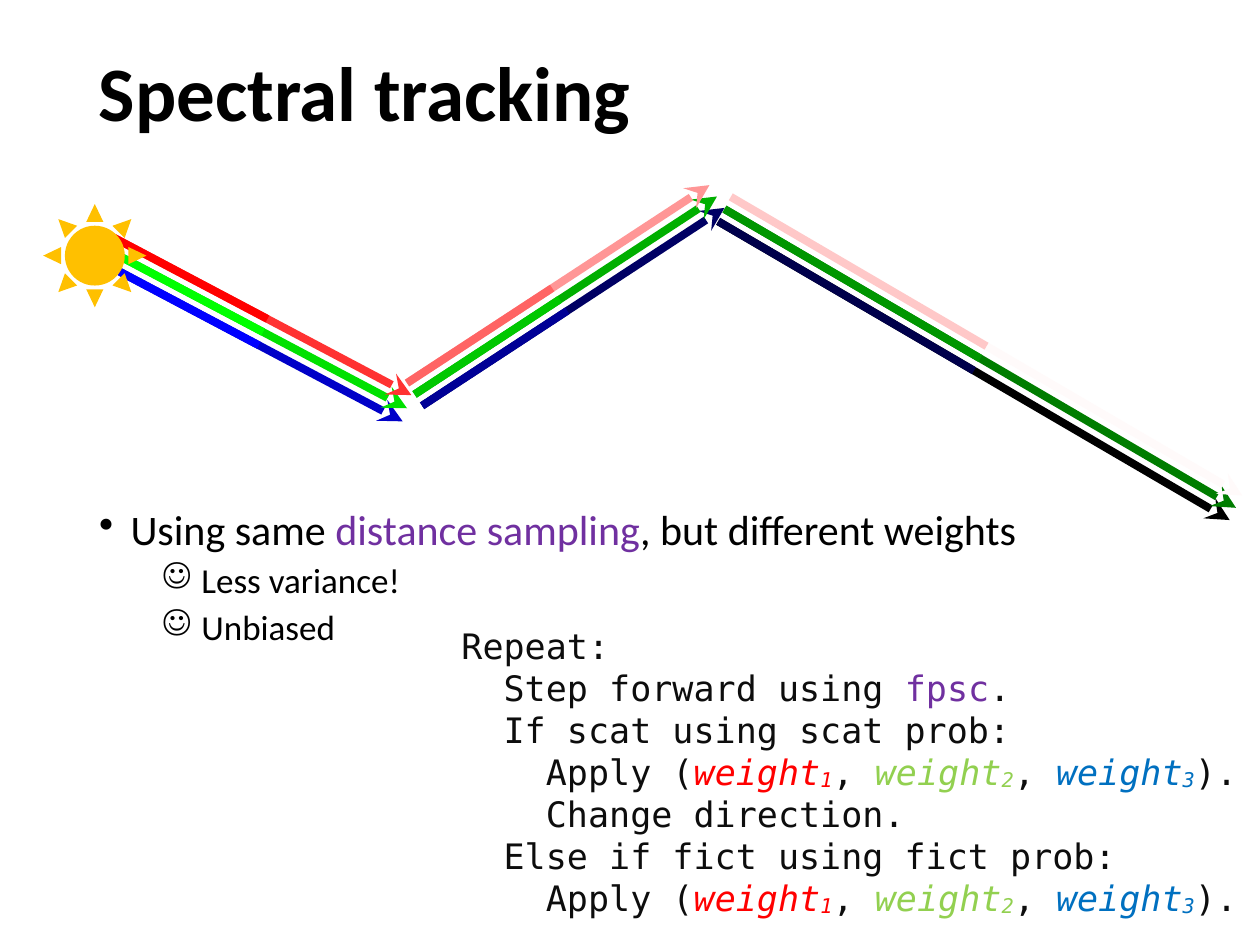
from dataclasses import dataclass

from lxml import etree
from pptx import Presentation
from pptx import util as u
from pptx.dml import color
from pptx.enum import shapes, text
from pptx.oxml import ns


@dataclass(frozen=True)
class Theme:
    """Fonts, type sizes and colours of the slide."""
    sans: str = "Calibri"
    mono: str = "DejaVu Sans Mono"
    title_size: int = 44
    body_size: int = 24
    small_size: int = 20
    black: str = "000000"
    code: str = "0D0D0D"
    purple: str = "7030A0"
    sun: str = "FFC000"
    weights: tuple = ("FF0000", "92D050", "0070C0")


@dataclass(frozen=True)
class Leg:
    """One straight path of three beams, with blue, green and red colours."""
    start: tuple
    end: tuple
    red_shift: tuple
    first_share: float
    first_colors: tuple
    full_colors: tuple


THEME = Theme()
LEGS = (
    Leg((236.9, 225.4), (409.7, 112.3), (-4.3, -6.5), 0.48,
        ("000096", "00C800", "FF6464"), ("000064", "00AF00", "FF9696")),
    Leg((61.2, 142.6), (232.6, 233.3), (2.5, -7.5), 0.52,
        ("0000FF", "00FF00", "FF0000"), ("0000C8", "00E100", "FF3232")),
    Leg((414, 119.5), (706.3, 290.2), (3.6, -7), 0.5,
        ("00004B", "009600", "FFC8C8"), ("000000", "007D00", "FFFAFA")),
)


def rgb(value):
    """Turn a hex string into a colour."""
    return color.RGBColor.from_string(value)


def add_box(page, left, top, width, height, inset=None, wrap=True, anchor=text.MSO_ANCHOR.TOP):
    """Add a text box and return its text frame."""
    frame = page.shapes.add_textbox(u.Pt(left), u.Pt(top), u.Pt(width), u.Pt(height)).text_frame
    frame.word_wrap = wrap
    frame.vertical_anchor = anchor
    if inset is not None:
        frame.margin_left = frame.margin_right = u.Pt(inset)
        frame.margin_top = frame.margin_bottom = u.Pt(inset)
    return frame


def add_para(frame, spans, font, size, fill, bullet=None, margin=0, hang=0,
             before=0, spacing=None, bold=None):
    """Add a paragraph of (text, colour, style) spans."""
    first = frame.paragraphs[0]
    para = frame.add_paragraph() if first.runs else first
    if bullet:
        props = para._p.get_or_add_pPr()
        props.set("marL", str(u.Pt(margin)))
        props.set("indent", str(u.Pt(-hang)))
        etree.SubElement(props, ns.qn("a:buChar")).set("char", bullet)
    if spacing:
        para.line_spacing = spacing
    if before:
        para.space_before = u.Pt(before)
    para.font.name, para.font.size, para.font.bold = font, u.Pt(size), bold
    colors = {shade or fill for _, shade, _ in spans}
    if len(colors) == 1:
        para.font.color.rgb = rgb(colors.pop())
    for words, shade, style in spans:
        span = para.add_run()
        span.text = words
        if len({other for _, other, _ in spans}) > 1:
            span.font.color.rgb = rgb(shade or fill)
        if style:
            span.font.italic = True
        if style == "subscript":
            span._r.get_or_add_rPr().set("baseline", "-6000")


def plain(words, shade=None):
    """Make an upright span."""
    return words, shade, None


def weight_line():
    """Make the spans of the line that applies the three weights."""
    spans = [plain("    Apply (")]
    for number, shade in enumerate(THEME.weights, 1):
        spans += [("weight", shade, "italic"), (str(number), shade, "subscript"),
                  plain(", " if number < len(THEME.weights) else ").")]
    return spans


def add_beam(page, start, end, shade, arrow):
    """Draw one beam, with an arrowhead at its end if asked."""
    points = [u.Pt(value) for value in (*start, *end)]
    beam = page.shapes.add_connector(shapes.MSO_CONNECTOR.STRAIGHT, *points)
    beam.line.width = u.Pt(4.5)
    beam.line.color.rgb = rgb(shade)
    if arrow:
        etree.SubElement(beam.line._get_or_add_ln(), ns.qn("a:tailEnd")).set("type", "stealth")
    etree.SubElement(beam._element.spPr, ns.qn("a:effectLst"))


def add_leg(page, leg, first_part):
    """Draw the three beams of a leg, or only their first parts."""
    share = leg.first_share if first_part else 1
    colors = leg.first_colors if first_part else leg.full_colors
    for side, shade in zip((-1, 0, 1), colors):
        start = [place + side * shift for place, shift in zip(leg.start, leg.red_shift)]
        end = [a + share * (b - c) for a, b, c in zip(start, leg.end, leg.start)]
        add_beam(page, start, end, shade, not first_part)


def add_sun(page):
    """Draw the sun."""
    sun = page.shapes.add_shape(shapes.MSO_SHAPE.SUN, u.Pt(24.7), u.Pt(116.6), u.Pt(59), u.Pt(59))
    sun.adjustments[0] = 0.21
    sun.shadow.inherit = False
    sun.fill.solid()
    sun.fill.fore_color.rgb = rgb(THEME.sun)
    sun.line.fill.background()


def add_title(page):
    """Add the heading."""
    frame = add_box(page, 49.5, 24, 621, 62.5, anchor=text.MSO_ANCHOR.MIDDLE)
    add_para(frame, [plain("Spectral tracking")], THEME.sans, THEME.title_size, THEME.black,
             spacing=0.9, bold=True)


def add_points(page):
    """Add the bulleted statements."""
    frame = add_box(page, 49.5, 287.5, 602, 216)
    lead = [plain("Using same "), plain("distance sampling", THEME.purple),
            plain(", but different weights")]
    add_para(frame, lead, THEME.sans, THEME.body_size, THEME.black,
             bullet="•", margin=18, hang=18, spacing=0.9)
    for words in ("Less variance!", "Unbiased"):
        add_para(frame, [plain(words)], THEME.sans, THEME.small_size, THEME.black,
                 bullet="☺", margin=58.5, hang=22.5, before=5, spacing=0.9)


def add_code(page):
    """Add the pseudocode."""
    frame = add_box(page, 259.2, 352, 456.5, 178, 4.5, False, text.MSO_ANCHOR.MIDDLE)
    frame.auto_size = text.MSO_AUTO_SIZE.SHAPE_TO_FIT_TEXT
    lines = (
        [plain("Repeat:")],
        [plain("  Step forward using "), plain("fpsc", THEME.purple), plain(".")],
        [plain("  If scat using scat prob:")],
        weight_line(),
        [plain("    Change direction.")],
        [plain("  Else if fict using fict prob:")],
        weight_line(),
    )
    for spans in lines:
        add_para(frame, spans, THEME.mono, THEME.small_size, THEME.code)


def main():
    """Build the slide and save it."""
    deck = Presentation()
    deck.slide_width, deck.slide_height = u.Pt(720), u.Pt(540)
    page = deck.slides.add_slide(deck.slide_layouts[6])
    add_title(page)
    add_points(page)
    for first_part in (False, True):
        for leg in LEGS:
            add_leg(page, leg, first_part)
    add_code(page)
    add_sun(page)
    deck.save("out.pptx")


if __name__ == "__main__":
    main()
